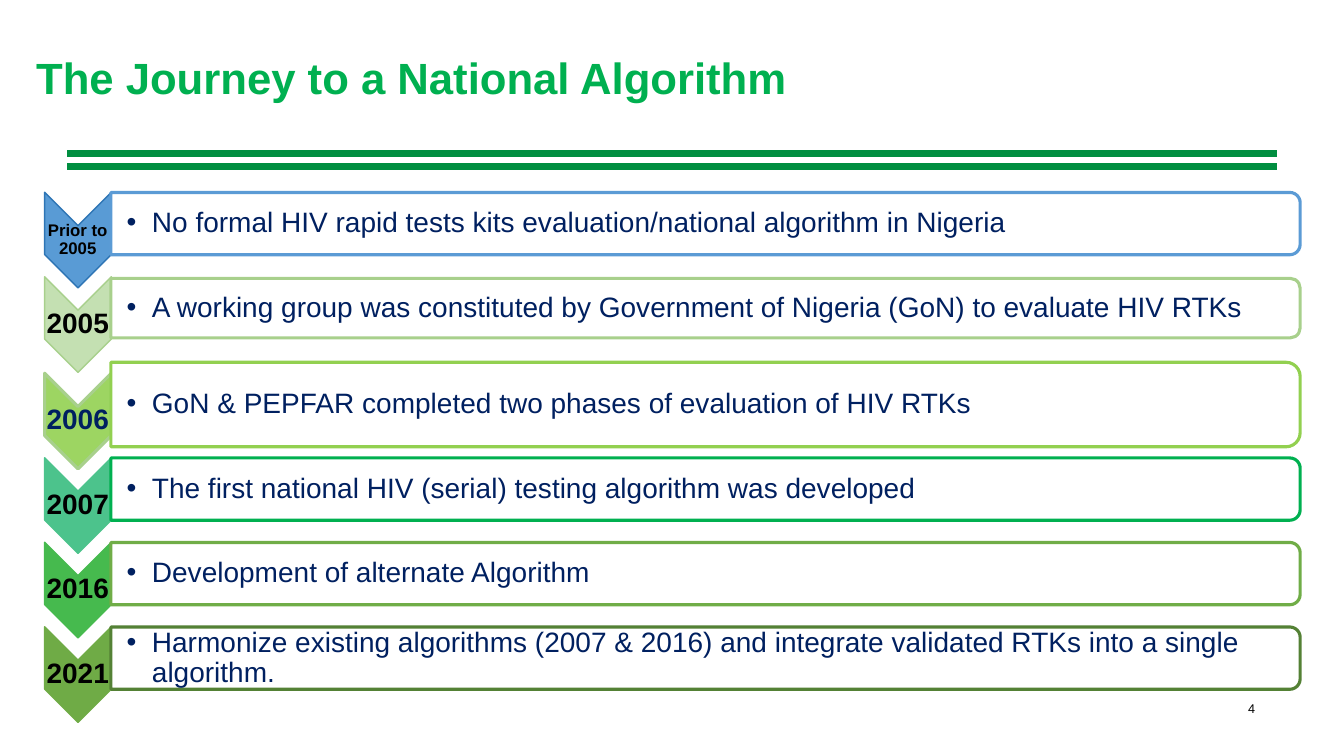
"""Build the slide on the journey to a national HIV testing algorithm."""
from lxml import etree
from pptx import Presentation
from pptx.dml.color import RGBColor
from pptx.enum.shapes import MSO_CONNECTOR, MSO_SHAPE
from pptx.enum.text import MSO_ANCHOR, MSO_AUTO_SIZE, PP_ALIGN
from pptx.oxml.ns import qn
from pptx.util import Cm, Pt

CHEVRON = MSO_SHAPE.CHEVRON
ROUND = MSO_SHAPE.ROUND_2_SAME_RECTANGLE
STRAIGHT = MSO_CONNECTOR.STRAIGHT
TOP, MIDDLE = MSO_ANCHOR.TOP, MSO_ANCHOR.MIDDLE
LEFT, CENTER, RIGHT = PP_ALIGN.LEFT, PP_ALIGN.CENTER, PP_ALIGN.RIGHT
NO_FIT = MSO_AUTO_SIZE.NONE
NAVY, BLACK = "002060", "000000"


def paint(form, tone):
    if hasattr(form, "solid"):
        form.solid()
        form = form.fore_color
    form.rgb = RGBColor.from_string(tone)


def write(box, text, size, tone, bold, align, anchor, pads, bullet=False):
    frame = box.text_frame
    frame.text = text
    frame.word_wrap = True
    frame.auto_size = NO_FIT
    frame.vertical_anchor = anchor
    frame.margin_left, frame.margin_right = Cm(pads[0]), Cm(pads[1])
    frame.margin_top = frame.margin_bottom = Cm(pads[2])
    para = frame.paragraphs[0]
    para.alignment = align
    para.line_spacing = 0.9
    if bullet:
        props = para._p.get_or_add_pPr()
        props.set("marL", str(Cm(0.64)))
        props.set("indent", str(Cm(-0.64)))
        etree.SubElement(props, qn("a:buFont")).set("typeface", "Arial")
        etree.SubElement(props, qn("a:buChar")).set("char", "•")
    font = para.runs[0].font
    font.name, font.size, font.bold = "Arial", Pt(size), bold
    paint(font.color, tone)


deck = Presentation()
deck.slide_width, deck.slide_height = Cm(33.87), Cm(19.05)
slide = deck.slides.add_slide(deck.slide_layouts[5])
shapes = slide.shapes

title = shapes.title
title.left, title.top = Cm(0.66), Cm(1.14)
title.width, title.height = Cm(30.61), Cm(1.78)
write(title, "The Journey to a National Algorithm", 31.2, "00B050", True,
      LEFT, MIDDLE, (0.25, 0.25, 0.13))

for y in (3.86, 4.19):
    rule = shapes.add_connector(STRAIGHT, Cm(1.7), Cm(y), Cm(32.18), Cm(y))
    rule.line.width = Pt(5)
    paint(rule.line.fill, "008E40")
    etree.SubElement(rule._element.spPr, qn("a:effectLst"))

# year, year size, year colour, fill, edge, edge width, bar edge, bar height, text
steps = [
    ("Prior to 2005", 12, BLACK, "599BD5", "2E75B5", 1, "5B9BD5", 1.57,
     "No formal HIV rapid tests kits evaluation/national algorithm in Nigeria"),
    ("2005", 20, BLACK, "C4E0B2", "A8D08C", 1, "A8D08C", 1.5,
     "A working group was constituted by Government of Nigeria (GoN) to evaluate HIV RTKs"),
    ("2006", 20, NAVY, "9DD562", "A8D08C", 2.25, "92D050", 2.13,
     "GoN & PEPFAR completed two phases of evaluation of HIV RTKs"),
    ("2007", 20, BLACK, "4CC38C", "4CC38C", 1, "00B050", 1.57,
     "The first national HIV (serial) testing algorithm was developed"),
    ("2016", 20, BLACK, "46BA4E", "46BA4E", 1, "70AD47", 1.57,
     "Development of alternate Algorithm"),
    ("2021", 20, BLACK, "6FAB46", "6FAB46", 1, "548135", 1.57,
     "Harmonize existing algorithms (2007 & 2016) and integrate validated RTKs "
     "into a single algorithm."),
]

for i, (year, size, ink, fill, edge, width, rim, high, text) in enumerate(steps):
    mid = 6.05 + 2.13 * i + (0.3 if i > 1 else 0)
    row = mid - 0.41

    mark = shapes.add_shape(CHEVRON, Cm(0.76), Cm(mid - 0.84), Cm(2.41), Cm(1.68))
    bar = shapes.add_shape(ROUND, Cm(17.78 - high / 2), Cm(row - 14.99),
                           Cm(high), Cm(29.97))
    looks = ((mark, fill, edge, width), (bar, "FFFFFF", rim, 2.25))
    for shape, tone, line, weight in looks:
        shape.rotation = 90
        shape.shadow.inherit = False
        paint(shape.fill, tone)
        paint(shape.line.fill, line)
        shape.line.width = Pt(weight)

    label = shapes.add_textbox(Cm(1.12), Cm(mid - 0.36), Cm(1.68), Cm(0.71))
    write(label, year, size, ink, True, CENTER, MIDDLE, (0.02, 0.02, 0.02))
    note = shapes.add_textbox(Cm(2.79), Cm(row - 0.7), Cm(29.9), Cm(1.4))
    write(note, text, 20, NAVY, False, LEFT, MIDDLE, (0.4, 0.02, 0.02), True)

page = shapes.add_textbox(Cm(23.98), Cm(17.58), Cm(7.9), Cm(1.32))
write(page, "4", 9, BLACK, False, RIGHT, TOP, (0.25, 0.25, 0.13))

deck.save("out.pptx")
